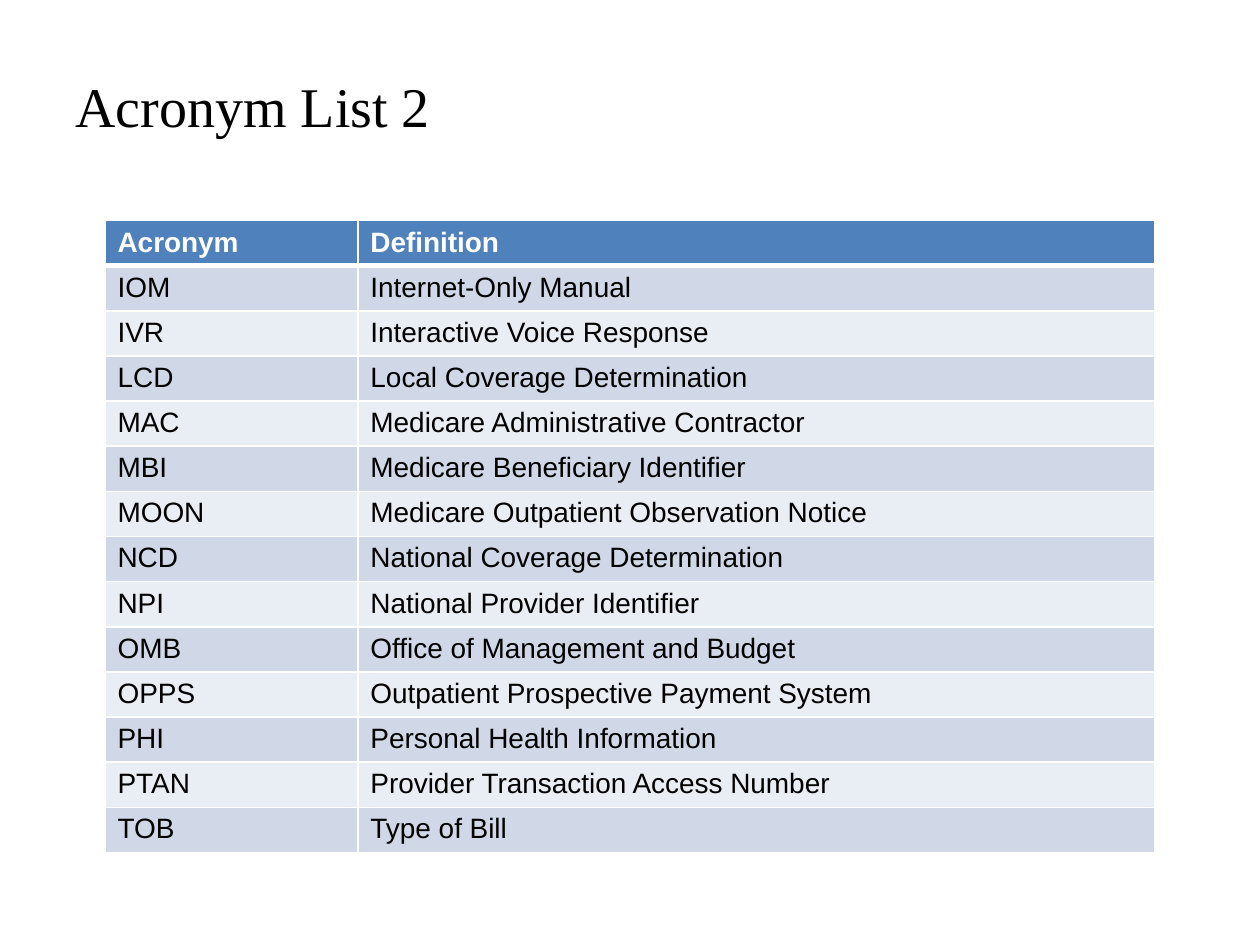
from pptx import Presentation
from pptx.dml.color import RGBColor
from pptx.enum import text
from pptx.oxml import parse_xml
from pptx.oxml.ns import nsdecls
from pptx.util import Pt

# Content
TITLE = "Acronym List 2"
HEADER = ("Acronym", "Definition")
ACRONYMS = [
    ("IOM", "Internet-Only Manual"),
    ("IVR", "Interactive Voice Response"),
    ("LCD", "Local Coverage Determination"),
    ("MAC", "Medicare Administrative Contractor"),
    ("MBI", "Medicare Beneficiary Identifier"),
    ("MOON", "Medicare Outpatient Observation Notice"),
    ("NCD", "National Coverage Determination"),
    ("NPI", "National Provider Identifier"),
    ("OMB", "Office of Management and Budget"),
    ("OPPS", "Outpatient Prospective Payment System"),
    ("PHI", "Personal Health Information"),
    ("PTAN", "Provider Transaction Access Number"),
    ("TOB", "Type of Bill"),
]
COLORS = {
    "black": "000000",
    "white": "FFFFFF",
    "header": "4F81BD",
    "odd": "D0D8E8",
    "even": "E9EDF4",
}
COLUMN_WIDTHS = (144.5, 455.5)
ROW_HEIGHT = 25.17


def color(name):
    return RGBColor.from_string(COLORS[name])


def add_span(para, words, font, size, ink, bold=False):
    span = para.add_run()
    span.text = words
    span.font.name = font
    span.font.size = Pt(size)
    span.font.bold = bold
    span.font.color.rgb = color(ink)


def add_borders(cell, bottom, top):
    """Put white borders before the fill, as the schema orders them."""
    widths = {"lnL": 1, "lnR": 1, "lnT": top, "lnB": bottom}
    for place, (side, width) in enumerate(widths.items()):
        line = parse_xml(
            f'<a:{side} {nsdecls("a")} w="{Pt(width)}"><a:solidFill>'
            f'<a:srgbClr val="{COLORS["white"]}"/></a:solidFill></a:{side}>'
        )
        cell._tc.get_or_add_tcPr().insert(place, line)


def add_title(page):
    box = page.shapes.add_textbox(Pt(36), Pt(18), Pt(480), Pt(84))
    frame = box.text_frame
    frame.word_wrap = True
    frame.vertical_anchor = text.MSO_ANCHOR.MIDDLE
    add_span(frame.paragraphs[0], TITLE, "Times New Roman", 32, "black")


def add_acronym_table(page):
    rows = [HEADER, *ACRONYMS]
    table = page.shapes.add_table(
        len(rows), len(HEADER), Pt(60), Pt(126),
        Pt(sum(COLUMN_WIDTHS)), Pt(ROW_HEIGHT * len(rows)),
    ).table
    for column, width in zip(table.columns, COLUMN_WIDTHS):
        column.width = Pt(width)

    for r, words in enumerate(rows):
        table.rows[r].height = Pt(ROW_HEIGHT)
        is_header = r == 0
        fill = "header" if is_header else "odd" if r % 2 else "even"
        for c, word in enumerate(words):
            cell = table.cell(r, c)
            cell.margin_top, cell.margin_bottom = Pt(3.6), Pt(3)
            cell.fill.solid()
            cell.fill.fore_color.rgb = color(fill)
            add_borders(cell, bottom=3 if is_header else 1, top=3 if r == 1 else 1)
            add_span(cell.text_frame.paragraphs[0], word, "Arial", 16,
                     "white" if is_header else "black", is_header)


def main():
    deck = Presentation()
    deck.slide_width, deck.slide_height = Pt(720), Pt(540)
    page = deck.slides.add_slide(deck.slide_layouts[6])
    add_title(page)
    add_acronym_table(page)
    deck.save("out.pptx")


if __name__ == "__main__":
    main()
